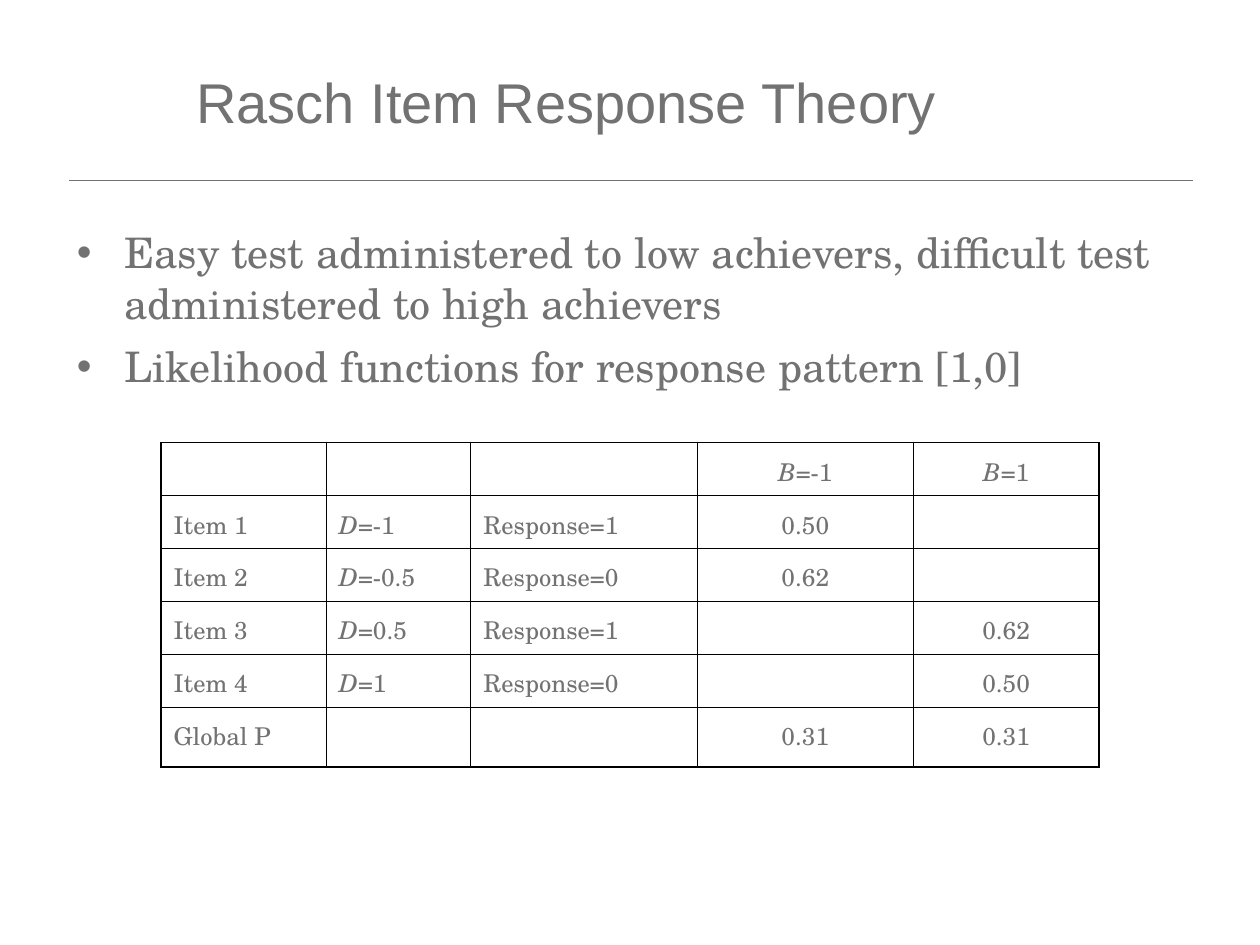
from dataclasses import dataclass

from lxml.etree import SubElement
from pptx import Presentation
from pptx.dml.color import RGBColor
from pptx.enum.shapes import MSO_CONNECTOR
from pptx.enum.text import MSO_ANCHOR, MSO_AUTO_SIZE, PP_ALIGN
from pptx.oxml.ns import qn
from pptx.util import Pt


@dataclass(frozen=True)
class Theme:
    gray: str = "727272"
    edge: str = "000000"
    head: str = "Arial"
    text: str = "TeX Gyre Schola"
    big: float = 32
    mid: float = 24
    small: float = 14


class Deck:
    """Hold the theme and the current slide, and add elements to it."""

    def __init__(self, theme, width, height):
        self.theme = theme
        self.show = Presentation()
        self.show.slide_width, self.show.slide_height = Pt(width), Pt(height)
        self.slide = self.show.slides.add_slide(self.show.slide_layouts[1])

    def style(self, para, name, size):
        para.font.name, para.font.size = name, Pt(size)
        para.font.color.rgb = RGBColor.from_string(self.theme.gray)

    def place(self, shape, box):
        shape.left, shape.top, shape.width, shape.height = map(Pt, box)
        frame = shape.text_frame
        frame.word_wrap, frame.auto_size = True, MSO_AUTO_SIZE.NONE
        return frame

    def title(self, text, box):
        frame = self.place(self.slide.shapes.title, box)
        frame.vertical_anchor = MSO_ANCHOR.MIDDLE
        frame.text = text
        para = frame.paragraphs[0]
        para.alignment = PP_ALIGN.LEFT
        self.style(para, self.theme.head, self.theme.big)

    def rule(self, left, top, width):
        line = self.slide.shapes.add_connector(
            MSO_CONNECTOR.STRAIGHT, Pt(left), Pt(top), Pt(left + width), Pt(top))
        line.line.width = Pt(0.5)
        line.line.color.rgb = RGBColor.from_string(self.theme.gray)
        SubElement(line._element.spPr, qn("a:effectLst"))

    def bullets(self, items, box, indent, gap):
        frame = self.place(self.slide.placeholders[1], box)
        frame.text = "\n".join(items)
        for spot, para in enumerate(frame.paragraphs):
            para.space_before = Pt(gap if spot else 0)
            props = para._p.get_or_add_pPr()
            props.set("marL", str(Pt(indent)))
            props.set("indent", str(-Pt(indent)))
            tint = SubElement(props, qn("a:buClr"))
            SubElement(tint, qn("a:srgbClr"), val=self.theme.gray)
            SubElement(props, qn("a:buFont"), typeface=self.theme.head)
            SubElement(props, qn("a:buChar"), char="•")
            self.style(para, self.theme.text, self.theme.mid)

    def border(self, cell):
        props = cell._tc.get_or_add_tcPr()
        for side in ("a:lnL", "a:lnR", "a:lnT", "a:lnB"):
            line = SubElement(props, qn(side), w=str(Pt(1)))
            fill = SubElement(line, qn("a:solidFill"))
            SubElement(fill, qn("a:srgbClr"), val=self.theme.edge)

    def cell(self, cell, text, align):
        self.border(cell)
        cell.fill.background()
        cell.margin_top = Pt(6)
        para = cell.text_frame.paragraphs[0]
        para.alignment = align
        self.style(para, self.theme.text, self.theme.small)
        name, sign, value = text.partition("=")
        if sign and len(name) == 1:
            run = para.add_run()
            run.text, run.font.italic = name, True
            text = sign + value
        if text:
            para.add_run().text = text

    def table(self, data, left, top, wide, tall):
        grid = self.slide.shapes.add_table(
            len(tall), len(wide), Pt(left), Pt(top), Pt(sum(wide)), Pt(sum(tall))).table
        grid.first_row = grid.horz_banding = False
        for col, width in zip(grid.columns, wide):
            col.width = Pt(width)
        for row, height, texts in zip(grid.rows, tall, data):
            row.height = Pt(height)
            for spot, (cell, text) in enumerate(zip(row.cells, texts)):
                self.cell(cell, text, PP_ALIGN.LEFT if spot < 3 else PP_ALIGN.CENTER)


def main():
    deck = Deck(Theme(), 720, 540)
    deck.rule(39.5, 103, 642.5)
    deck.title("Rasch Item Response Theory", (105, 26, 510.5, 64))
    deck.bullets(
        ["Easy test administered to low achievers, difficult test "
         "administered to high achievers",
         "Likelihood functions for response pattern [1,0]"],
        (36.75, 126, 647.25, 121), 27, 7.6)
    data = [
        ("", "", "", "B=-1", "B=1"),
        ("Item 1", "D=-1", "Response=1", "0.50", ""),
        ("Item 2", "D=-0.5", "Response=0", "0.62", ""),
        ("Item 3", "D=0.5", "Response=1", "", "0.62"),
        ("Item 4", "D=1", "Response=0", "", "0.50"),
        ("Global P", "", "", "0.31", "0.31"),
    ]
    deck.table(data, 92, 253, (94.5, 82.5, 129.5, 123.5, 106),
               (30.25, *[27.9] * 4, 34))
    deck.show.save("out.pptx")


if __name__ == "__main__":
    main()
